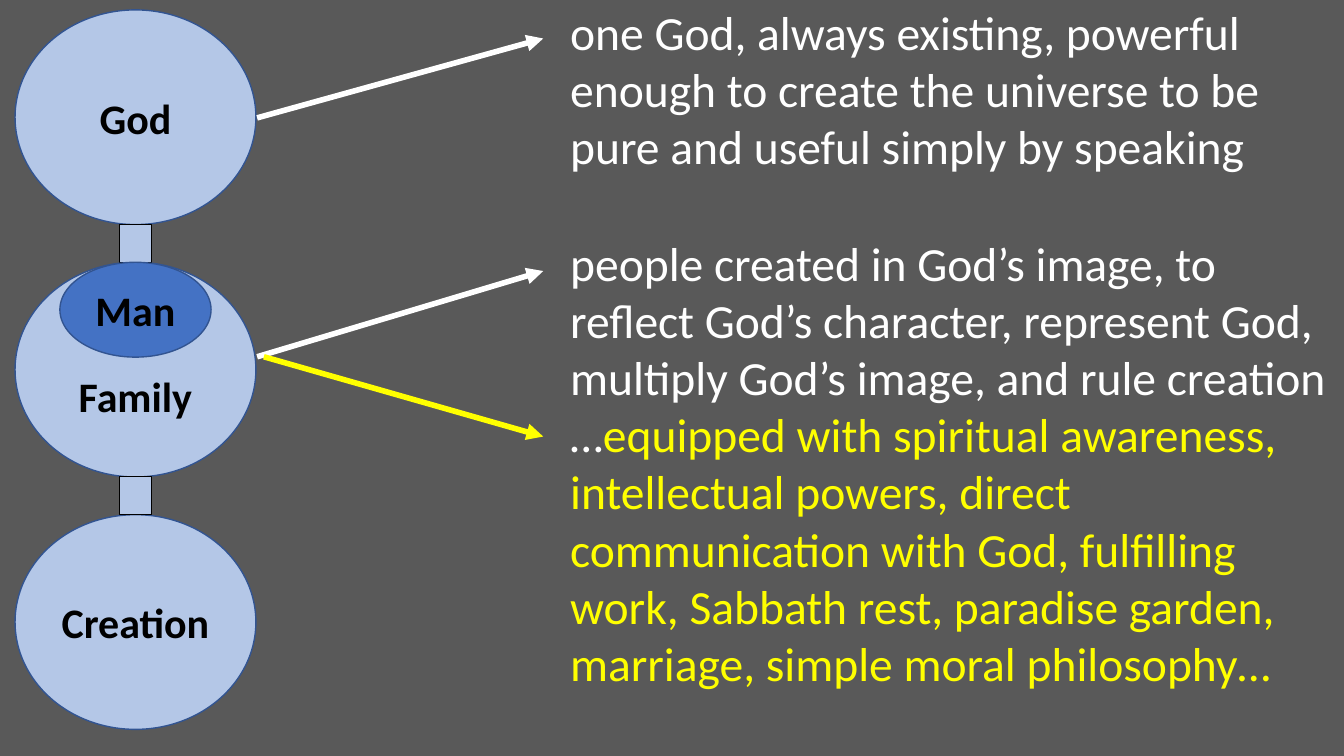
from lxml import etree
from pptx import Presentation
from pptx.dml.color import RGBColor
from pptx.enum.shapes import MSO_CONNECTOR, MSO_SHAPE
from pptx.enum.text import MSO_ANCHOR, PP_ALIGN
from pptx.oxml.ns import qn
from pptx.util import Cm, Pt

OVAL, RECTANGLE = MSO_SHAPE.OVAL, MSO_SHAPE.RECTANGLE
STRAIGHT = MSO_CONNECTOR.STRAIGHT
MIDDLE, CENTER = MSO_ANCHOR.MIDDLE, PP_ALIGN.CENTER

GREY = RGBColor(0x59, 0x59, 0x59)
WHITE = RGBColor(0xFF, 0xFF, 0xFF)
YELLOW = RGBColor(0xFF, 0xFF, 0x00)
BLACK = RGBColor(0x00, 0x00, 0x00)
PALE_BLUE = RGBColor(0xB4, 0xC7, 0xE7)
BLUE = RGBColor(0x44, 0x72, 0xC4)
DARK_BLUE = RGBColor(0x32, 0x54, 0x91)
FONT = "Calibri"

GOD_TEXT = [
    ("one God, always existing, powerful enough to create the universe "
     "to be pure and useful simply by speaking", WHITE),
]
PEOPLE_TEXT = [
    ("people created in God’s image, to reflect God’s character, represent God, "
     "multiply God’s image, and rule creation …", WHITE),
    ("equipped with spiritual awareness, intellectual powers, direct communication "
     "with God, fulfilling work, Sabbath rest, paradise garden, marriage, "
     "simple moral philosophy…", YELLOW),
]


def add_figure(shapes, kind, box, fill, line, line_width, label="", drop=0):
    """Draw a filled shape; drop adds to the top inset to lower its label."""
    left, top, width, height = box
    shape = shapes.add_shape(kind, Cm(left), Cm(top), Cm(width), Cm(height))
    shape.shadow.inherit = False
    shape.fill.solid()
    shape.fill.fore_color.rgb = fill
    shape.line.color.rgb = line
    shape.line.width = Pt(line_width)
    if label:
        frame = shape.text_frame
        frame.vertical_anchor = MIDDLE
        frame.margin_top += Cm(drop)
        para = frame.paragraphs[0]
        para.text = label
        para.alignment = CENTER
        para.font.name = FONT
        para.font.size = Pt(30)
        para.font.bold = True
        para.font.color.rgb = BLACK


def add_chain(page, box):
    """Stack three circles joined by short links, with Man inside Family."""
    left, top, width, height = box
    link_width, link_height = 0.79, 0.95
    man_width, man_height = 3.81, 2.39
    circle_height = (height - 2 * link_height) / 3
    pitch = circle_height + link_height
    middle = left + width / 2
    shapes = page.shapes.add_group_shape().shapes

    for row, (label, drop) in enumerate([("God", 0), ("Family", 1.3), ("Creation", 0)]):
        circle = (left, top + row * pitch, width, circle_height)
        add_figure(shapes, OVAL, circle, PALE_BLUE, DARK_BLUE, 1, label, drop)
    for row in range(2):
        link = (middle - link_width / 2, top + row * pitch + circle_height,
                link_width, link_height)
        add_figure(shapes, RECTANGLE, link, PALE_BLUE, BLACK, 0.75)
    man = (middle - man_width / 2, top + pitch, man_width, man_height)
    add_figure(shapes, OVAL, man, BLUE, DARK_BLUE, 1, "Man")


def add_description(page, box, spans):
    left, top, width, height = box
    text_box = page.shapes.add_textbox(Cm(left), Cm(top), Cm(width), Cm(height))
    frame = text_box.text_frame
    frame.word_wrap = True
    para = frame.paragraphs[0]
    para.font.name = FONT
    para.font.size = Pt(34)
    for text, color in spans:
        span = para.add_run()
        span.text = text
        span.font.color.rgb = color


def add_arrow(page, box, rise, color):
    """Point from the left to the right of the box, upwards if rise is True."""
    left, top, width, height = box
    start, end = (top + height, top) if rise else (top, top + height)
    arrow = page.shapes.add_connector(
        STRAIGHT, Cm(left), Cm(start), Cm(left + width), Cm(end))
    arrow.line.color.rgb = color
    arrow.line.width = Pt(4)
    line = arrow.line._get_or_add_ln()
    etree.SubElement(line, qn("a:tailEnd"), type="triangle")
    etree.SubElement(arrow._element.spPr, qn("a:effectLst"))


def main():
    deck = Presentation()
    deck.slide_width, deck.slide_height = Cm(33.87), Cm(19.05)
    page = deck.slides.add_slide(deck.slide_layouts[6])
    page.background.fill.solid()
    page.background.fill.fore_color.rgb = GREY

    add_chain(page, (0.38, 0.25, 6.07, 18.13))
    add_description(page, (14.12, -0.05, 19.74, 4.62), GOD_TEXT)
    add_description(page, (14.12, 5.77, 19.74, 13.26), PEOPLE_TEXT)
    add_arrow(page, (6.48, 0.97, 7.21, 2), True, WHITE)
    add_arrow(page, (6.48, 6.83, 7.21, 2.16), True, WHITE)
    add_arrow(page, (6.65, 8.99, 7.04, 2.01), False, YELLOW)
    deck.save("out.pptx")


if __name__ == "__main__":
    main()
